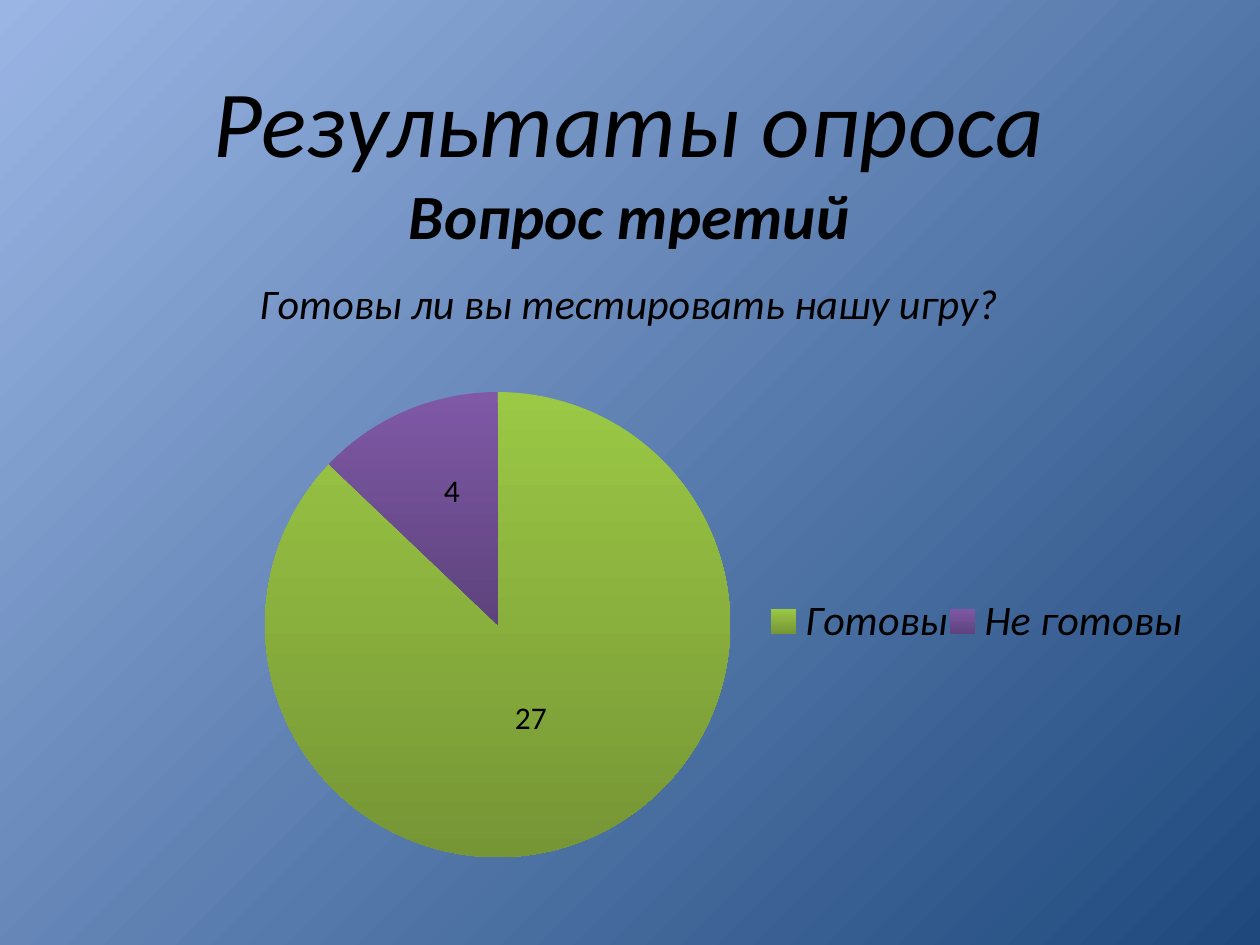
from dataclasses import dataclass

from lxml import etree
from pptx import Presentation
from pptx.chart.data import CategoryChartData
from pptx.dml.color import RGBColor
from pptx.enum.chart import XL_CHART_TYPE, XL_LABEL_POSITION, XL_LEGEND_POSITION
from pptx.enum.text import MSO_ANCHOR, MSO_AUTO_SIZE, PP_ALIGN
from pptx.oxml.ns import qn
from pptx.util import Inches, Pt

PIE = XL_CHART_TYPE.PIE
LABEL_CENTER = XL_LABEL_POSITION.CENTER
LEGEND_RIGHT = XL_LEGEND_POSITION.RIGHT
MIDDLE = MSO_ANCHOR.MIDDLE
NO_AUTOFIT = MSO_AUTO_SIZE.NONE
CENTER = PP_ALIGN.CENTER
TITLE_ONLY = 5


@dataclass(frozen=True)
class Theme:
    font: str = "Calibri"
    text: str = "000000"
    background: tuple = ("9AB5E4", "1F497D")
    slices: tuple = (("9BC845", "769535"), ("7F58A6", "5D437D"))
    title_size: int = 54
    subtitle_size: int = 36
    caption_size: int = 24
    label_size: int = 18


def format_font(font, theme, size, bold=False, italic=False):
    font.name = theme.font
    font.size = Pt(size)
    font.bold = bold
    font.italic = italic
    font.color.rgb = RGBColor.from_string(theme.text)


def fill_gradient(fill, colors, angle):
    """Blend two colours; the angle runs counter-clockwise in degrees."""
    fill.gradient()
    fill.gradient_angle = angle
    for stop, color, position in zip(fill.gradient_stops, colors, (0, 1)):
        stop.color.rgb = RGBColor.from_string(color)
        stop.position = position


def place_chart_part(part, index, inner=False, edge=True, **fractions):
    """Place a part in fractions of the chart, from its edge or usual place."""
    for old in part.findall(qn("c:layout")):
        part.remove(old)
    layout = etree.Element(qn("c:layout"))
    manual = etree.SubElement(layout, qn("c:manualLayout"))
    settings = {"layoutTarget": "inner"} if inner else {}
    if edge:
        settings.update(xMode="edge", yMode="edge")
    settings.update(fractions)
    for name, value in settings.items():
        etree.SubElement(manual, qn(f"c:{name}"), val=str(value))
    part.insert(index, layout)


class PageBuilder:
    def __init__(self, page, theme):
        self.page = page
        self.theme = theme

    def background(self):
        fill_gradient(self.page.background.fill, self.theme.background, 315)

    def title(self, lines, left, top, width, height):
        """Fill the title with (text, size, bold) lines."""
        box = self.page.shapes.title
        box.left, box.top, box.width, box.height = map(
            Inches, (left, top, width, height))
        frame = box.text_frame
        frame.word_wrap = True
        frame.auto_size = NO_AUTOFIT
        frame.vertical_anchor = MIDDLE
        for number, (text, size, bold) in enumerate(lines):
            para = frame.add_paragraph() if number else frame.paragraphs[0]
            para.alignment = CENTER
            span = para.add_run()
            span.text = text
            format_font(span.font, self.theme, size, bold=bold, italic=True)

    def pie(self, caption, answers, left, top, width, height):
        """Draw (name, value, label shift) answers; unnamed ones stay empty."""
        data = CategoryChartData()
        data.categories = [name for name, _, _ in answers]
        data.add_series("Series 1", [value for _, value, _ in answers])
        chart = self.page.shapes.add_chart(
            PIE, *map(Inches, (left, top, width, height)), data).chart
        plot = chart.plots[0]
        plot.vary_by_categories = True
        series = plot.series[0]
        self.pie_labels(series.data_labels)
        named = [index for index, answer in enumerate(answers) if answer[0]]
        for index, colors in zip(named, self.theme.slices):
            point = series.points[index]
            fill_gradient(point.format.fill, colors, 270)
            point.format.line.fill.background()
            self.shift_label(point.data_label, *answers[index][2])
        self.pie_caption(chart, caption)
        self.pie_legend(chart, set(range(len(answers))) - set(named))
        plot_area = chart._chartSpace.chart.plotArea
        place_chart_part(plot_area, 0, inner=True, x=0.21, y=0.21, w=0.37, h=0.71)

    def pie_labels(self, labels):
        labels.show_value = True
        labels.show_percentage = False
        labels.position = LABEL_CENTER
        format_font(labels.font, self.theme, self.theme.label_size)

    def shift_label(self, label, right, down):
        format_font(label.font, self.theme, self.theme.label_size)
        label.position = LABEL_CENTER
        place_chart_part(label._get_or_add_dLbl(), 1, edge=False, x=right, y=down)

    def pie_caption(self, chart, caption):
        chart.has_title = True
        frame = chart.chart_title.text_frame
        frame.text = caption
        format_font(frame.paragraphs[0].runs[0].font, self.theme,
                    self.theme.caption_size, italic=True)
        place_chart_part(chart.chart_title._element, 1, x=0.2, y=0.02)

    def pie_legend(self, chart, unlisted):
        chart.has_legend = True
        legend = chart.legend
        legend.position = LEGEND_RIGHT
        legend.include_in_layout = False
        format_font(legend.font, self.theme, self.theme.caption_size, italic=True)
        place_chart_part(legend._element, 1, x=0.61, y=0.52, w=0.33, h=0.08)
        for place, index in enumerate(sorted(unlisted), start=1):
            entry = etree.Element(qn("c:legendEntry"))
            etree.SubElement(entry, qn("c:idx"), val=str(index))
            etree.SubElement(entry, qn("c:delete"), val="1")
            legend._element.insert(place, entry)


def main():
    theme = Theme()
    deck = Presentation()
    deck.slide_width, deck.slide_height = Inches(10), Inches(7.5)
    page = deck.slides.add_slide(deck.slide_layouts[TITLE_ONLY])
    builder = PageBuilder(page, theme)
    builder.background()
    builder.title(
        [("Результаты опроса", theme.title_size, False),
         ("Вопрос третий", theme.subtitle_size, True)],
        1.06, 0.44, 7.87, 1.62)
    unnamed = ("", None, None)
    builder.pie(
        "Готовы ли вы тестировать нашу игру?",
        [unnamed, unnamed,
         ("Готовы", 27, (-0.01, -0.02)), ("Не готовы", 4, (0, -0.04))],
        0, 2.02, 10, 5.2)
    deck.save("out.pptx")


if __name__ == "__main__":
    main()
